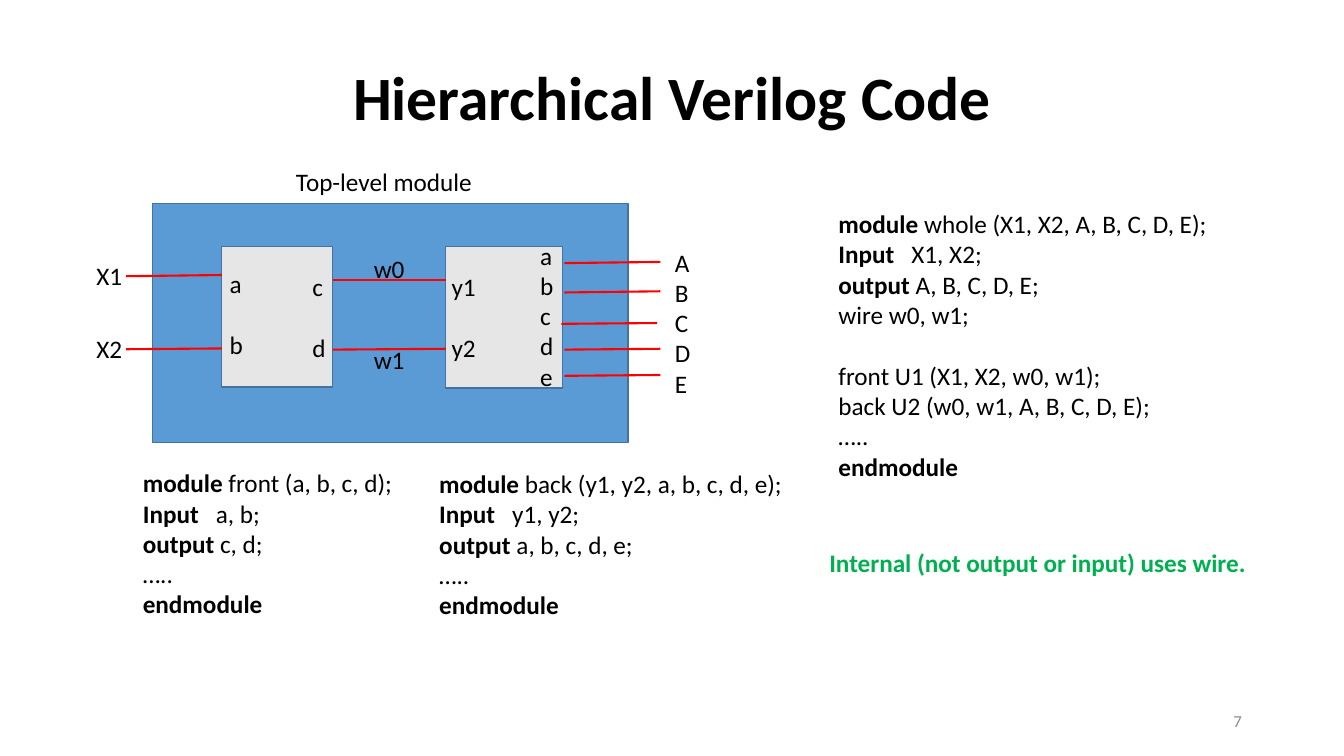
import pptx
import pptx.util
import pptx.dml.color
import pptx.enum.text
import pptx.enum.shapes
import lxml.etree

Cm = pptx.util.Cm
Pt = pptx.util.Pt
RGBColor = pptx.dml.color.RGBColor
Align = pptx.enum.text.PP_ALIGN
Anchor = pptx.enum.text.MSO_ANCHOR

BLACK = RGBColor(0x00, 0x00, 0x00)
GREY = RGBColor(0x8C, 0x8C, 0x8C)
GREEN = RGBColor(0x00, 0xB0, 0x50)
RED = RGBColor(0xFF, 0x00, 0x00)
BLUE = RGBColor(0x5B, 0x9B, 0xD5)
LIGHT = RGBColor(0xE7, 0xE6, 0xE6)
OUTLINE = RGBColor(0x43, 0x73, 0x9E)
FONT = "Calibri"
TEXT_SIZE = 18
LINE_HEIGHT = 22
TAB_STOP = Cm(1.84)

TITLE = "Hierarchical Verilog Code"
MODULES = [
    ((3.84, 5.13, 11.99, 6.02), BLUE),
    ((5.59, 6.22, 2.79, 3.53), LIGHT),
    ((11.23, 6.22, 2.95, 3.56), LIGHT),
]
WIRE_GROUPS = [
    (3.18, 5.59, [(6.96, 6.93), (8.8, 8.78)]),
    (14.22, 16.64, [(6.63, 6.6), (7.37, 7.34), (8.81, 8.79), (9.47, 9.45)]),
    (14.15, 16.56, [(8.16, 8.14)]),
    (8.38, 11.23, [(7.06, 7.06), (8.81, 8.79)]),
]
PORT_LABELS = [
    ((2.18, 6.43, 1.17, 1.02), ["X1"], 0),
    ((2.18, 8.28, 1.17, 1.02), ["X2"], 0),
    ((16.76, 6.1, 0.91, 4.11), ["A", "B", "C", "D", "E"], 0),
    ((5.54, 6.63, 0.86, 2.57), ["a", "b"], 1),
    ((7.62, 6.71, 0.86, 2.57), ["c", "d"], 1),
    ((11.13, 6.71, 1.12, 2.57), ["y1", "y2"], 1),
    ((13.36, 5.92, 0.86, 4.11), ["a", "b", "c", "d", "e"], 0),
    ((9.17, 6.25, 1.3, 3.33), ["w0", "w1"], 2),
    ((7.21, 4.06, 5.16, 1.02), ["Top-level module"], 0),
]
CODE_BLOCKS = [
    ((3.35, 11.66, 6.86, 4.88), [
        ("module", " front (a, b, c, d);", 0),
        ("Input", "\ta, b;", 0),
        ("output", " c, d;", 0),
        ("", "…..", 0),
        ("endmodule", "", 0),
    ]),
    ((10.82, 11.68, 9.25, 4.88), [
        ("module", " back (y1, y2, a, b, c, d, e);", 0),
        ("Input", "\ty1, y2;", 0),
        ("output", " a, b, c, d, e;", 0),
        ("", "…..", 0),
        ("endmodule", "", 0),
    ]),
    ((20.88, 5.13, 9.91, 7.95), [
        ("module", " whole (X1, X2, A, B, C, D, E);", 0),
        ("Input", "\tX1, X2;", 0),
        ("output", " A, B, C, D, E;", 0),
        ("", "wire w0, w1;", 0),
        ("", "front U1 (X1, X2, w0, w1);", 1),
        ("", "back U2 (w0, w1, A, B, C, D, E);", 0),
        ("", "…..", 0),
        ("endmodule", "", 0),
    ]),
]
NOTE = ((20.65, 13.67, 11.1, 1.02), "Internal (not output or input) uses wire.")
PAGE_NUMBER = ((23.93, 17.65, 7.62, 1.02), "7")


def add_run(paragraph, text, size=TEXT_SIZE, color=BLACK, bold=False):
    run = paragraph.add_run()
    run.text = text
    run.font.name = FONT
    run.font.size = Pt(size)
    run.font.bold = bold
    run.font.color.rgb = color


def add_tab_stop(paragraph):
    properties = paragraph._p.get_or_add_pPr()
    tabs = lxml.etree.SubElement(properties, pptx.oxml.ns.qn("a:tabLst"))
    lxml.etree.SubElement(tabs, pptx.oxml.ns.qn("a:tab"), pos=str(TAB_STOP), algn="l")


def add_text_frame(slide, box):
    frame = slide.shapes.add_textbox(*map(Cm, box)).text_frame
    frame.word_wrap = False
    return frame


def add_lines(slide, box, lines):
    frame = add_text_frame(slide, box)
    for index, (keyword, rest, gap) in enumerate(lines):
        paragraph = frame.add_paragraph() if index else frame.paragraphs[0]
        if index and gap:
            paragraph.space_before = Pt(gap * LINE_HEIGHT)
        if "\t" in rest:
            add_tab_stop(paragraph)
        if keyword:
            add_run(paragraph, keyword, bold=True)
        if rest:
            add_run(paragraph, rest)


def add_module(slide, box, color):
    shape = slide.shapes.add_shape(
        pptx.enum.shapes.MSO_SHAPE.RECTANGLE, *map(Cm, box))
    shape.shadow.inherit = False
    shape.fill.solid()
    shape.fill.fore_color.rgb = color
    shape.line.color.rgb = OUTLINE
    shape.line.width = Pt(1)


def add_wire(slide, *ends):
    wire = slide.shapes.add_connector(
        pptx.enum.shapes.MSO_CONNECTOR.STRAIGHT, *map(Cm, ends))
    wire.line.color.rgb = RED
    wire.line.width = Pt(1.5)
    lxml.etree.SubElement(wire._element.spPr, pptx.oxml.ns.qn("a:effectLst"))


def add_title(slide):
    title = slide.shapes.title
    title.left, title.top, title.width, title.height = map(Cm, (2.34, 1.02, 29.21, 3.02))
    title.text_frame.vertical_anchor = Anchor.MIDDLE
    paragraph = title.text_frame.paragraphs[0]
    paragraph.alignment = Align.CENTER
    paragraph.line_spacing = 0.9
    add_run(paragraph, TITLE, 44, bold=True)


def main():
    presentation = pptx.Presentation()
    presentation.slide_width = Cm(33.87)
    presentation.slide_height = Cm(19.05)
    slide = presentation.slides.add_slide(presentation.slide_layouts[5])
    add_title(slide)
    for box, color in MODULES:
        add_module(slide, box, color)
    for start, end, levels in WIRE_GROUPS:
        for start_level, end_level in levels:
            add_wire(slide, start, start_level, end, end_level)
    for box, names, gap in PORT_LABELS:
        add_lines(slide, box, [("", name, gap) for name in names])
    for box, lines in CODE_BLOCKS:
        add_lines(slide, box, lines)

    box, text = NOTE
    add_run(add_text_frame(slide, box).paragraphs[0], text, color=GREEN, bold=True)

    box, text = PAGE_NUMBER
    frame = add_text_frame(slide, box)
    frame.word_wrap = True
    frame.vertical_anchor = Anchor.MIDDLE
    frame.paragraphs[0].alignment = Align.RIGHT
    add_run(frame.paragraphs[0], text, 12, GREY)
    presentation.save("out.pptx")


if __name__ == "__main__":
    main()
